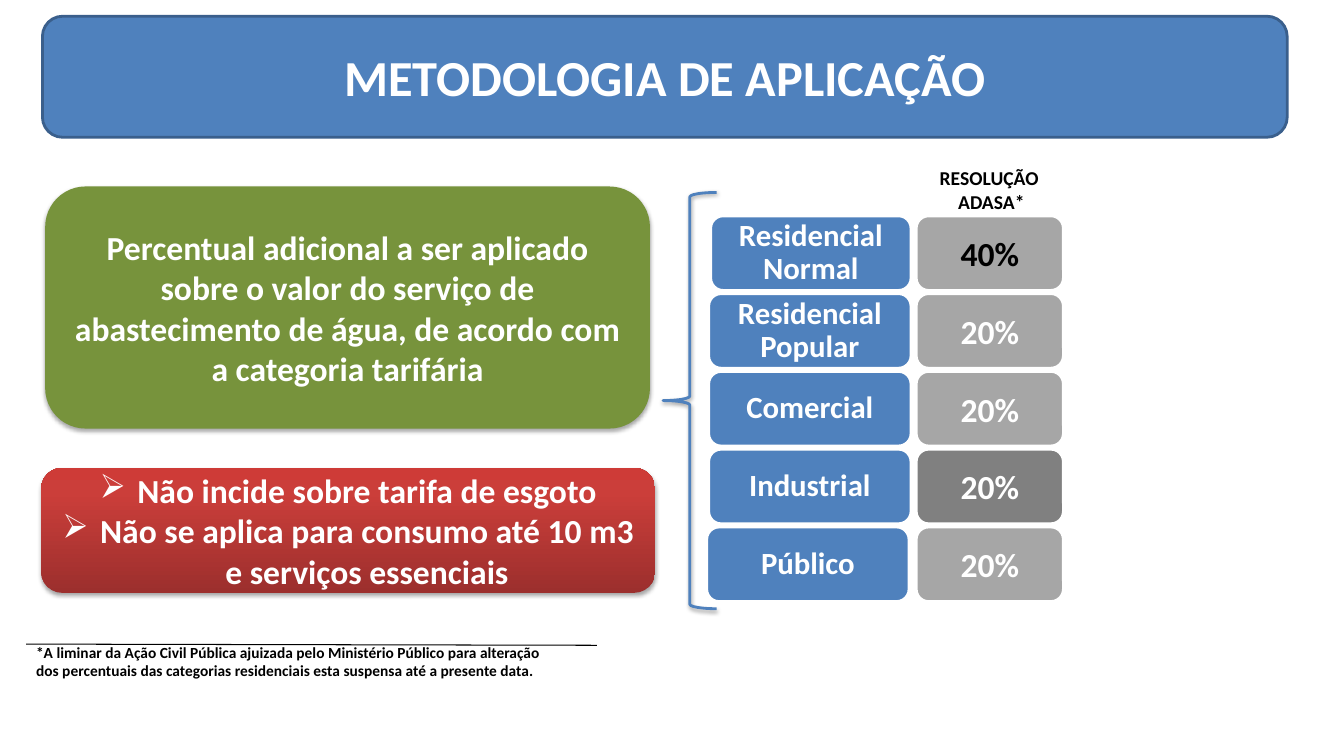
from copy import deepcopy
from dataclasses import dataclass

from lxml import etree
from pptx import Presentation
from pptx.dml.color import RGBColor
from pptx.enum.shapes import MSO_CONNECTOR, MSO_SHAPE
from pptx.enum.text import MSO_ANCHOR, PP_ALIGN
from pptx.oxml.ns import qn
from pptx.util import Cm, Pt

ROUNDED, BRACE = MSO_SHAPE.ROUNDED_RECTANGLE, MSO_SHAPE.LEFT_BRACE
STRAIGHT = MSO_CONNECTOR.STRAIGHT
LEFT, CENTER = PP_ALIGN.LEFT, PP_ALIGN.CENTER
TOP, MIDDLE = MSO_ANCHOR.TOP, MSO_ANCHOR.MIDDLE


@dataclass(frozen=True)
class Theme:
    font: str = "Calibri"
    white: str = "FFFFFF"
    black: str = "000000"
    blue: str = "4F81BD"
    navy: str = "3A5F8C"
    green: str = "77933C"
    gray: str = "A6A6A6"
    dark_gray: str = "808080"
    reds: tuple = ((0, "9C2F2D"), (0.8, "CB3E3A"), (1, "CE3B37"))
    title: int = 36
    body: int = 24
    category: int = 22
    header: int = 14
    note: int = 11


THEME = Theme()

TITLE = "METODOLOGIA DE APLICAÇÃO"
RULE = ("Percentual adicional a ser aplicado sobre o valor do serviço de "
        "abastecimento de água, de acordo com a categoria tarifária")
EXEMPTIONS = ["Não incide sobre tarifa de esgoto",
              "Não se aplica para consumo até 10 m3 e serviços essenciais"]
HEADER = ["RESOLUÇÃO", " ADASA*"]
RATES = [
    ("Residencial Normal", 17.91, 5.05, "40%", THEME.gray, THEME.black),
    ("Residencial Popular", 17.86, 5.1, "20%", THEME.gray, THEME.white),
    ("Comercial", 17.86, 5.1, "20%", THEME.gray, THEME.white),
    ("Industrial", 17.86, 5.1, "20%", THEME.dark_gray, THEME.white),
    ("Público", 17.81, 5.1, "20%", THEME.gray, THEME.white),
]
NOTE = ("*A liminar da Ação Civil Pública ajuizada pelo Ministério Público para "
        "alteração dos percentuais das categorias residenciais esta suspensa "
        "até a presente data.")

RATES_TOP, RATE_PITCH, RATE_HEIGHT = 5.44, 1.96, 1.88
PERCENT_LEFT, PERCENT_WIDTH = 23.09, 3.71


def rgb(color):
    return RGBColor.from_string(color)


def write(holder, lines, size, color, align=CENTER, anchor=MIDDLE, spacing=None,
          wrap=True, bullet=None):
    frame = holder.text_frame
    frame.word_wrap = wrap
    frame.vertical_anchor = anchor
    frame.text = "\n".join(lines)
    for paragraph in frame.paragraphs:
        paragraph.alignment = align
        if spacing:
            paragraph.line_spacing = spacing
        if bullet:
            properties = paragraph._p.get_or_add_pPr()
            properties.set("marL", str(Cm(0.95)))
            properties.set("indent", str(-Cm(0.95)))
            etree.SubElement(properties, qn("a:buChar"), char=bullet)
        paragraph.font.name = THEME.font
        paragraph.font.size = Pt(size)
        paragraph.font.bold = True
        paragraph.font.color.rgb = rgb(color)


def add_block(slide, kind, box, fill=None, line=None):
    block = slide.shapes.add_shape(kind, *map(Cm, box))
    block.shadow.inherit = False
    if fill:
        block.fill.solid()
        block.fill.fore_color.rgb = rgb(fill)
    else:
        block.fill.background()
    if line:
        block.line.color.rgb = rgb(line)
        block.line.width = Pt(2)
    else:
        block.line.fill.background()
    return block


def add_shadow(block, distance, opacity):
    effects = block._element.spPr.find(qn("a:effectLst"))
    shadow = etree.SubElement(effects, qn("a:outerShdw"), blurRad=str(Pt(3.1)),
                              dist=str(Pt(distance)), dir="5400000", rotWithShape="0")
    tint = etree.SubElement(shadow, qn("a:srgbClr"), val=THEME.black)
    etree.SubElement(tint, qn("a:alpha"), val=str(opacity * 1000))


def fill_gradient(block, stops):
    block.fill.gradient()
    block.fill.gradient_angle = 90
    stop_list = block._element.spPr.find(".//" + qn("a:gsLst"))
    while len(stop_list) < len(stops):
        stop_list.append(deepcopy(stop_list[0]))
    for stop, (position, color) in zip(block.fill.gradient_stops, stops):
        stop.position = position
        stop.color.rgb = rgb(color)


def add_rate(slide, index, category, left, width, percent, fill, color):
    top = RATES_TOP + index * RATE_PITCH
    cards = [
        ((left, top, width, RATE_HEIGHT), category, THEME.blue,
         THEME.category, THEME.white, 0.9),
        ((PERCENT_LEFT, top, PERCENT_WIDTH, RATE_HEIGHT), percent, fill,
         THEME.body, color, None),
    ]
    for box, label, card_fill, size, label_color, spacing in cards:
        card = add_block(slide, ROUNDED, box, card_fill, THEME.white)
        write(card, [label], size, label_color, spacing=spacing)


def main():
    deck = Presentation()
    deck.slide_width, deck.slide_height = Cm(33.87), Cm(19.05)
    slide = deck.slides.add_slide(deck.slide_layouts[6])

    banner = add_block(slide, ROUNDED, (1.07, 0.41, 31.37, 3.05), THEME.blue, THEME.navy)
    write(banner, [TITLE], THEME.title, THEME.white)

    brace = add_block(slide, BRACE, (16.71, 4.85, 1.35, 10.49), line=THEME.blue)
    add_shadow(brace, 1.6, 38)

    rule = add_block(slide, ROUNDED, (1.14, 4.7, 15.24, 6.1), THEME.green)
    add_shadow(rule, 1.8, 35)
    write(rule, [RULE], THEME.body, THEME.white)

    exemptions = add_block(slide, ROUNDED, (1.04, 11.79, 15.47, 3.15))
    fill_gradient(exemptions, THEME.reds)
    add_shadow(exemptions, 1.8, 35)
    write(exemptions, EXEMPTIONS, THEME.body, THEME.white, bullet="➢")

    for index, rate in enumerate(RATES):
        add_rate(slide, index, *rate)

    note = slide.shapes.add_textbox(Cm(0.66), Cm(16.08), Cm(13.56), Cm(1.19))
    write(note, [NOTE], THEME.note, THEME.black, LEFT, TOP)

    note_line = slide.shapes.add_connector(STRAIGHT, Cm(0.66), Cm(16.23),
                                           Cm(15.04), Cm(16.26))
    note_line.line.color.rgb = rgb(THEME.black)
    note_line.line.width = Pt(0.75)
    etree.SubElement(note_line._element.spPr, qn("a:effectLst"))

    header = slide.shapes.add_textbox(Cm(23.42), Cm(4.06), Cm(3.02), Cm(1.45))
    write(header, HEADER, THEME.header, THEME.black, anchor=TOP, wrap=False)

    deck.save("out.pptx")


if __name__ == "__main__":
    main()
